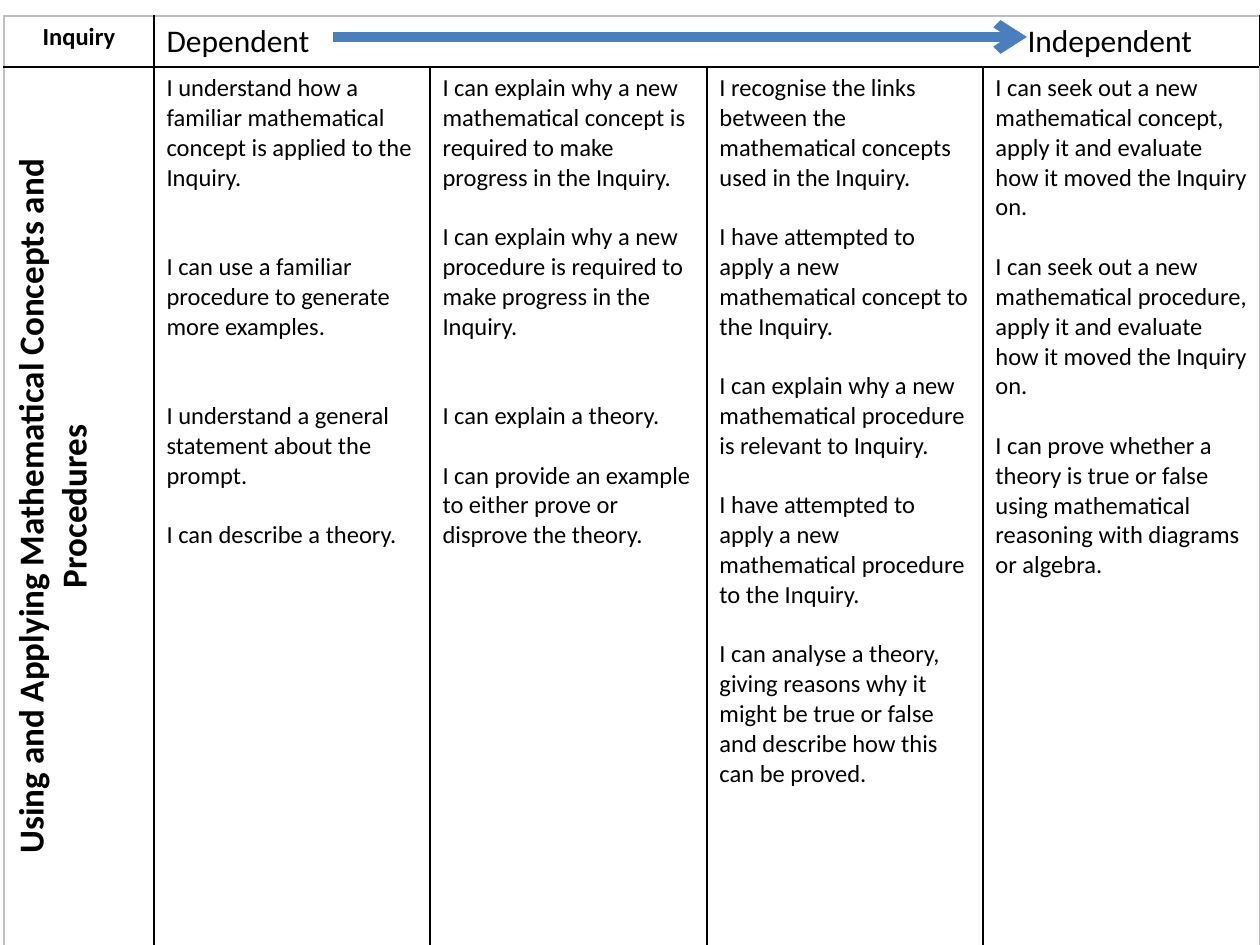
from dataclasses import dataclass

from lxml import etree
from pptx import Presentation
from pptx.dml.color import RGBColor
from pptx.enum.shapes import MSO_CONNECTOR
from pptx.enum.text import PP_ALIGN
from pptx.oxml.ns import qn
from pptx.util import Emu, Pt

STRAIGHT = MSO_CONNECTOR.STRAIGHT
LEFT, CENTER = PP_ALIGN.LEFT, PP_ALIGN.CENTER
PX = 914400 // 126
BLANK_LAYOUT = 6
LINE_PT = 17


@dataclass(frozen=True)
class Theme:
    """Colours, font and type sizes of the rubric."""
    font: str = "Calibri"
    ink: str = "000000"
    frame: str = "BFBFBF"
    arrow: str = "4B7EBC"
    body: int = 14
    scale: int = 18
    strand: int = 20
    rule: int = 1
    arrow_width: float = 5.5


class Rubric:
    """Draws the parts of a rubric on the current slide."""

    def __init__(self, slide, theme):
        self.slide = slide
        self.theme = theme

    def grid(self, left, top, edges, heights, frame_height):
        """Add a plain ruled table with the given column edges and row heights."""
        frame = self.slide.shapes.add_table(
            len(heights), len(edges) - 1, Emu(left * PX), Emu(top * PX),
            Emu((edges[-1] - left) * PX), Emu(sum(heights) * PX))
        table = frame.table
        table.first_row = table.horz_banding = False
        for column, start, end in zip(table.columns, edges, edges[1:]):
            column.width = Emu((end - start) * PX)
        for row, height in zip(table.rows, heights):
            row.height = Emu(height * PX)
        frame.height = Emu(frame_height * PX)
        last_column, last_row = len(edges) - 2, len(heights) - 1
        for r in range(last_row + 1):
            for c in range(last_column + 1):
                outer = {"lnL": c == 0, "lnR": c == last_column,
                         "lnT": r == 0, "lnB": r == last_row}
                self.borders(table.cell(r, c), outer)
        return table

    def borders(self, cell, outer):
        """Rule the four sides of a cell, with the outer sides in the frame colour."""
        properties = cell._tc.get_or_add_tcPr()
        for side, is_outer in outer.items():
            rule = etree.SubElement(properties, qn(f"a:{side}"), w=str(Pt(self.theme.rule)))
            fill = etree.SubElement(rule, qn("a:solidFill"))
            etree.SubElement(fill, qn("a:srgbClr"),
                             val=self.theme.frame if is_outer else self.theme.ink)
        cell.fill.background()

    def cell_text(self, cell, statements, size, bold=False, align=LEFT):
        """Fill a cell with (blank lines before, text) statements."""
        for index, (gap, text) in enumerate(statements):
            frame = cell.text_frame
            paragraph = frame.add_paragraph() if index else frame.paragraphs[0]
            paragraph.alignment = align
            paragraph.space_before = Pt(gap * LINE_PT)
            run = paragraph.add_run()
            run.text = text
            run.font.name = self.theme.font
            run.font.size = Pt(size)
            run.font.bold = bold
            run.font.color.rgb = RGBColor.from_string(self.theme.ink)

    def tab_stop(self, cell, position):
        """Set one left tab stop in a cell's first paragraph."""
        properties = cell.text_frame.paragraphs[0]._p.get_or_add_pPr()
        stops = etree.SubElement(properties, qn("a:tabLst"))
        etree.SubElement(stops, qn("a:tab"), pos=str(position * PX), algn="l")

    def arrow(self, start, end, y):
        """Add a horizontal arrow."""
        connector = self.slide.shapes.add_connector(
            STRAIGHT, Emu(start * PX), Emu(y * PX), Emu(end * PX), Emu(y * PX))
        connector.line.color.rgb = RGBColor.from_string(self.theme.arrow)
        connector.line.width = Pt(self.theme.arrow_width)
        etree.SubElement(connector.line._get_or_add_ln(), qn("a:tailEnd"), type="arrow")
        etree.SubElement(connector._element.spPr, qn("a:effectLst"))


LEVELS = [
    [(0, "I understand how a familiar mathematical concept is applied to the Inquiry."),
     (2, "I can use a familiar procedure to generate more examples."),
     (2, "I understand a general statement about the prompt."),
     (1, "I can describe a theory.")],
    [(0, "I can explain why a new mathematical concept is required to make progress in the Inquiry."),
     (1, "I can explain why a new procedure is required to make progress in the Inquiry."),
     (2, "I can explain a theory."),
     (1, "I can provide an example to either prove or disprove the theory.")],
    [(0, "I recognise the links between the mathematical concepts used in the Inquiry."),
     (1, "I have attempted to apply a new mathematical concept to the Inquiry."),
     (1, "I can explain why a new mathematical procedure is relevant to Inquiry."),
     (1, "I have attempted to apply a new mathematical procedure to the Inquiry."),
     (1, "I can analyse a theory, giving reasons why it might be true or false "
         "and describe how this can be proved.")],
    [(0, "I can seek out a new mathematical concept, apply it and evaluate how it moved the Inquiry on."),
     (1, "I can seek out a new mathematical procedure, apply it and evaluate how it moved the Inquiry on."),
     (1, "I can prove whether a theory is true or false using mathematical "
         "reasoning with diagrams or algebra.")],
]


def main():
    """Build the inquiry rubric slide."""
    deck = Presentation()
    deck.slide_width, deck.slide_height = Emu(1260 * PX), Emu(945 * PX)
    theme = Theme()
    rubric = Rubric(deck.slides.add_slide(deck.slide_layouts[BLANK_LAYOUT]), theme)

    left, levels_left, right = 4, 154, 1260
    count = len(LEVELS)
    edges = [left] + [levels_left + (right - levels_left) * i // count
                      for i in range(count + 1)]
    table = rubric.grid(left, 16, edges, [50, 394], 798)

    rubric.cell_text(table.cell(0, 0), [(0, "Inquiry")], theme.body, True, CENTER)
    scale = table.cell(0, 1)
    scale.merge(table.cell(0, count))
    rubric.cell_text(scale, [(0, "Dependent\tIndependent")], theme.scale)
    rubric.tab_stop(scale, 861)

    strand = table.cell(1, 0)
    strand._tc.get_or_add_tcPr().set("vert", "vert270")
    rubric.cell_text(strand, [(0, "Using and Applying Mathematical Concepts and Procedures")],
                     theme.strand, True, CENTER)
    for column, statements in enumerate(LEVELS, start=1):
        rubric.cell_text(table.cell(1, column), statements, theme.body)

    rubric.arrow(333, 1027, 37)
    deck.save("out.pptx")


if __name__ == "__main__":
    main()
